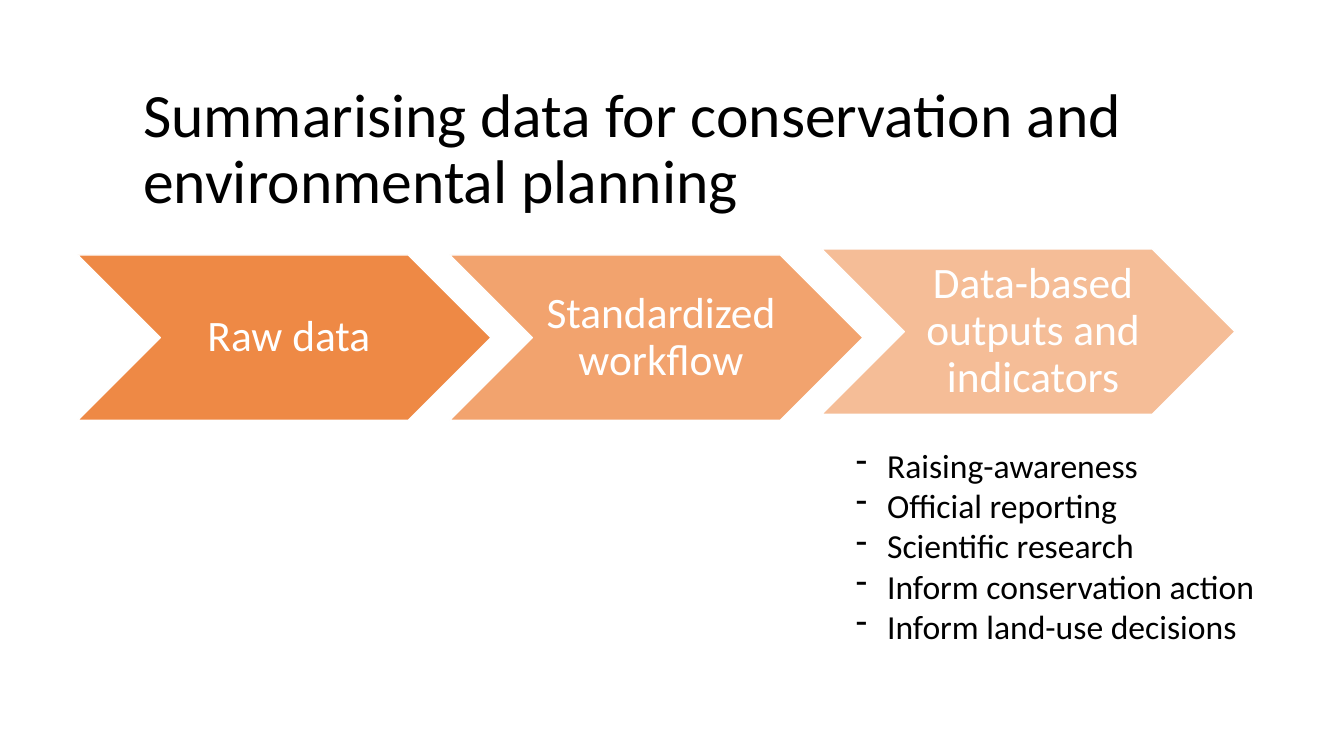
import pptx
import pptx.util
import pptx.dml.color
import pptx.enum.shapes
import pptx.enum.text
import pptx.oxml
import pptx.oxml.ns
from lxml import etree

# Content
TITLE = "Summarising data for conservation and environmental planning"
STAGES = [  # label, opacity in percent, top in inches
    ("Raw data", 90, 2.53),
    ("Standardized workflow", 70, 2.53),
    ("Data-based outputs and indicators", 50, 2.47),
]
USES = [
    "Raising-awareness",
    "Official reporting",
    "Scientific research",
    "Inform conservation action",
    "Inform land-use decisions",
]

# Layout in inches
SLIDE_W, SLIDE_H = 13.33, 7.5
STAGE_LEFT, STAGE_W, STAGE_H = 0.77, 4.1, 1.64
STAGE_STEP = 0.9 * STAGE_W
USE_INDENT = 0.31

FONT, ORANGE, BLACK, WHITE = "Calibri", "ED7D31", "000000", "FFFFFF"
ALIGN = pptx.enum.text.PP_ALIGN
MIDDLE = pptx.enum.text.MSO_ANCHOR.MIDDLE
inches = pptx.util.Inches


def color(value):
    return pptx.dml.color.RGBColor.from_string(value)


def write(paragraph, text, size, ink=BLACK, align=ALIGN.LEFT, spacing=None):
    paragraph.alignment = align
    paragraph.line_spacing = spacing
    run = paragraph.add_run()
    run.text = text
    run.font.name = FONT
    run.font.size = pptx.util.Pt(size)
    run.font.color.rgb = color(ink)


def set_opacity(fill_owner, percent):
    solid = fill_owner.find(pptx.oxml.ns.qn("a:solidFill"))
    alpha = etree.SubElement(solid[0], pptx.oxml.ns.qn("a:alpha"))
    alpha.set("val", str(percent * 1000))


def add_dash(paragraph, indent):
    props = paragraph._p.get_or_add_pPr()
    props.set("marL", str(inches(indent)))
    props.set("indent", str(-inches(indent)))
    bullet = etree.SubElement(props, pptx.oxml.ns.qn("a:buChar"))
    bullet.set("char", "-")


deck = pptx.Presentation()
deck.slide_width, deck.slide_height = inches(SLIDE_W), inches(SLIDE_H)
slide = deck.slides.add_slide(deck.slide_layouts[5])

# Title
title = slide.shapes.title
title.left, title.top = inches(1.32), inches(0.77)
title.width, title.height = inches(10.43), inches(1.45)
title.text_frame.vertical_anchor = MIDDLE
title.text_frame.word_wrap = True
write(title.text_frame.paragraphs[0], TITLE, 44, spacing=0.9)

# Chevron process
for index, (label, opacity, top) in enumerate(STAGES):
    stage = slide.shapes.add_shape(
        pptx.enum.shapes.MSO_SHAPE.CHEVRON,
        inches(STAGE_LEFT + index * STAGE_STEP), inches(top),
        inches(STAGE_W), inches(STAGE_H))
    stage.shadow.inherit = False
    stage.fill.solid()
    stage.fill.fore_color.rgb = color(ORANGE)
    set_opacity(stage._element.spPr, opacity)
    stage.line.color.rgb = color(WHITE)
    stage.line.width = pptx.util.Pt(1)
    frame = stage.text_frame
    frame.word_wrap = True
    frame.vertical_anchor = MIDDLE
    frame.margin_left, frame.margin_right = inches(0.09), 0
    frame.margin_top = frame.margin_bottom = inches(0.05)
    write(frame.paragraphs[0], label, 31, WHITE, ALIGN.CENTER, 0.9)

# Uses of the outputs
uses = slide.shapes.add_textbox(
    inches(8.39), inches(4.36), inches(4.44), inches(2.52)).text_frame
uses.word_wrap = True
for index, use in enumerate(USES):
    paragraph = uses.add_paragraph() if index else uses.paragraphs[0]
    write(paragraph, use, 24)
    add_dash(paragraph, USE_INDENT)

deck.save("out.pptx")
